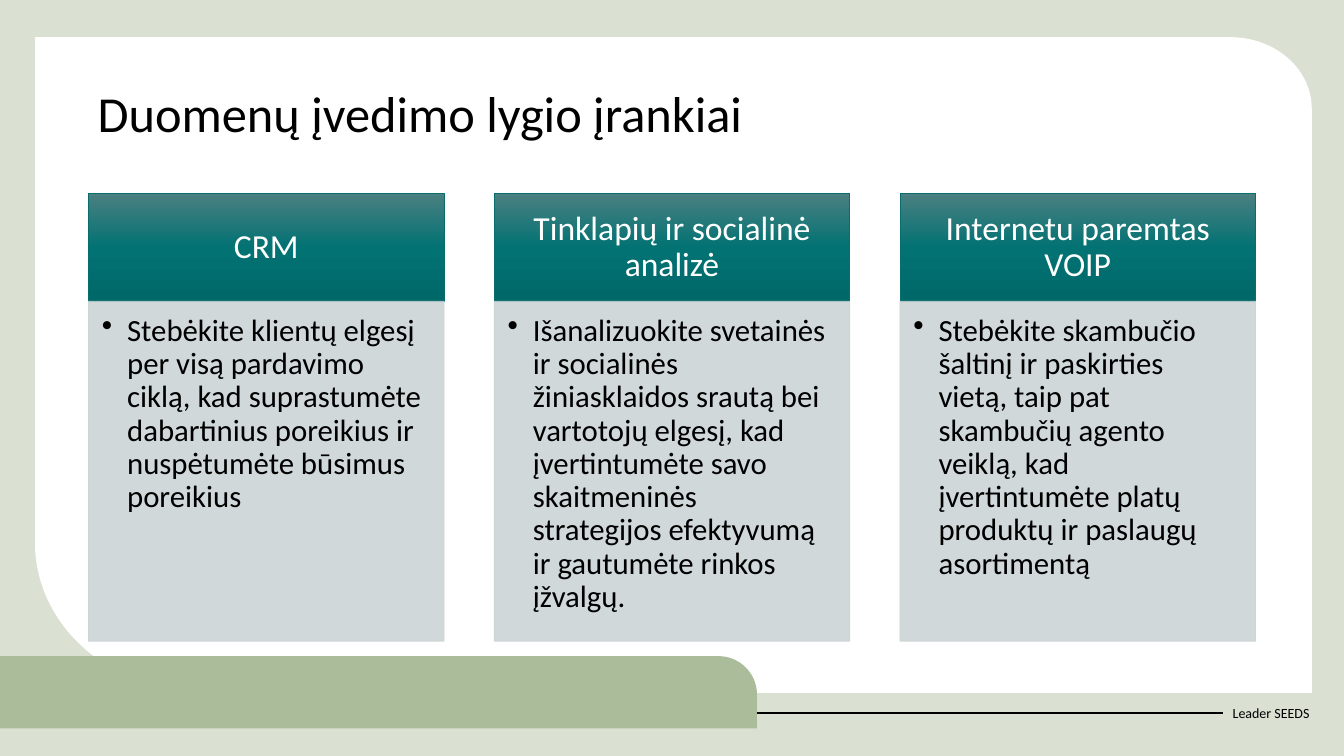
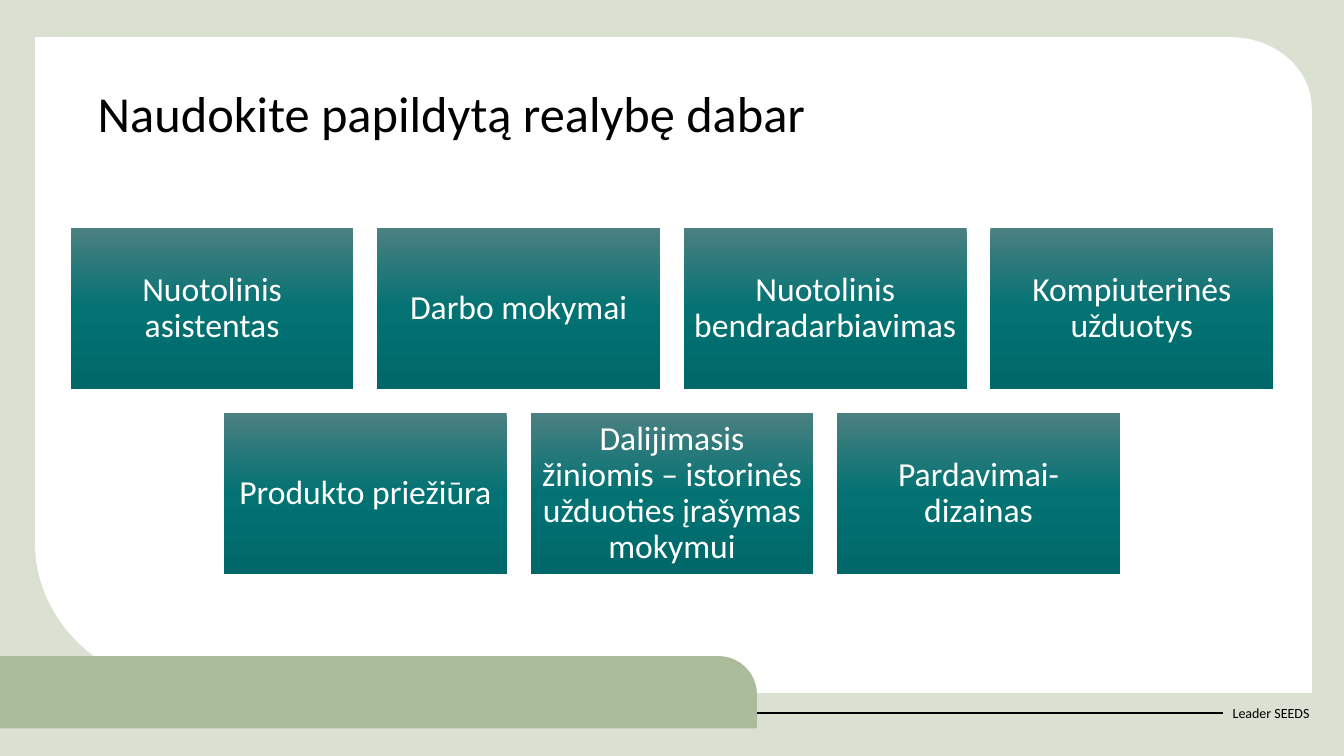
from copy import deepcopy
from math import cos, radians, sin

from lxml import etree
from pptx import Presentation
from pptx.dml.color import RGBColor
from pptx.enum.shapes import MSO_CONNECTOR, MSO_SHAPE
from pptx.enum.text import MSO_ANCHOR, MSO_AUTO_SIZE, PP_ALIGN
from pptx.oxml.ns import qn
from pptx.util import Pt

STRAIGHT = MSO_CONNECTOR.STRAIGHT
RECTANGLE = MSO_SHAPE.RECTANGLE
TOP, MIDDLE = MSO_ANCHOR.TOP, MSO_ANCHOR.MIDDLE
LEFT, CENTER = PP_ALIGN.LEFT, PP_ALIGN.CENTER
NO_AUTOFIT = MSO_AUTO_SIZE.NONE

PAGE_WIDTH, PAGE_HEIGHT = 960, 540
TITLE_ONLY = 5
FONT = "Calibri"
COLORS = {
    "backdrop": "DAE0D2",
    "panel": "FFFFFF",
    "band": "AABC99",
    "text": "000000",
    "light_text": "FFFFFF",
    "heading_line": "086D6E",
    "body": "CCD4D5",
    "teal_top": "4B8081",
    "teal_middle": "037273",
    "teal_bottom": "006869",
}
TEAL_STOPS = ((0, "teal_top"), (0.5, "teal_middle"), (1, "teal_bottom"))

TOOLS = (
    ("CRM",
     "Stebėkite klientų elgesį per visą pardavimo ciklą, kad suprastumėte "
     "dabartinius poreikius ir nuspėtumėte būsimus poreikius"),
    ("Tinklapių ir socialinė analizė",
     "Išanalizuokite svetainės ir socialinės žiniasklaidos srautą bei vartotojų "
     "elgesį, kad įvertintumėte savo skaitmeninės strategijos efektyvumą ir "
     "gautumėte rinkos įžvalgų."),
    ("Internetu paremtas VOIP",
     "Stebėkite skambučio šaltinį ir paskirties vietą, taip pat skambučių agento "
     "veiklą, kad įvertintumėte platų produktų ir paslaugų asortimentą"),
)
USE_ROWS = (
    ("Nuotolinis asistentas", "Darbo mokymai",
     "Nuotolinis bendradarbiavimas", "Kompiuterinės užduotys"),
    ("Produkto priežiūra",
     "Dalijimasis žiniomis – istorinės užduoties įrašymas mokymui",
     "Pardavimai-dizainas"),
)


def color(name):
    return RGBColor.from_string(COLORS[name])


def write(shape, text, size, color_name="text", align=LEFT, anchor=TOP,
          insets=(7.2, 3.6, 7.2, 3.6), spacing=0.9, bullet=False):
    """Fill a shape with one paragraph; insets run left, top, right, bottom."""
    frame = shape.text_frame
    frame.word_wrap = True
    frame.auto_size = NO_AUTOFIT
    frame.vertical_anchor = anchor
    (frame.margin_left, frame.margin_top,
     frame.margin_right, frame.margin_bottom) = map(Pt, insets)
    frame.text = text
    para = frame.paragraphs[0]
    para.alignment = align
    para.line_spacing = spacing
    if bullet:
        properties = para._p.get_or_add_pPr()
        properties.set("marL", str(Pt(18)))
        properties.set("indent", str(-Pt(18)))
        etree.SubElement(properties, qn("a:buChar")).set("char", "•")
    para.font.name = FONT
    para.font.size = Pt(size)
    para.font.color.rgb = color(color_name)


def add_rounded_panel(page, left, top, width, height, color_name,
                      top_right, bottom_left=(0, 0)):
    """Draw a rectangle with two elliptical corners, each given as two radii."""
    right, bottom = left + width, top + height

    def arc(center_x, center_y, radii, start):
        return [(Pt(center_x + radii[0] * cos(radians(angle))),
                 Pt(center_y + radii[1] * sin(radians(angle))))
                for angle in range(start, start + 91, 3)]

    points = arc(right - top_right[0], top + top_right[1], top_right, -90)
    points.append((Pt(right), Pt(bottom)))
    if any(bottom_left):
        points += arc(left + bottom_left[0], bottom - bottom_left[1], bottom_left, 90)
    else:
        points.append((Pt(left), Pt(bottom)))
    builder = page.shapes.build_freeform(Pt(left), Pt(top))
    builder.add_line_segments(points, close=True)
    panel = builder.convert_to_shape()
    panel.shadow.inherit = False
    panel.fill.solid()
    panel.fill.fore_color.rgb = color(color_name)
    panel.line.fill.background()


def add_page(deck, title_text):
    """Add a slide with the shared frame, footer and title."""
    page = deck.slides.add_slide(deck.slide_layouts[TITLE_ONLY])
    add_rounded_panel(page, 25, 26.6, 912, 468.4, "panel", (58, 51), (122, 107))

    footer = page.shapes.add_textbox(Pt(873.4), Pt(494.6), Pt(73), Pt(28.8))
    write(footer, "Leader SEEDS", 10, anchor=MIDDLE, spacing=1)
    rule = page.shapes.add_connector(STRAIGHT, 0, Pt(509), Pt(873.4), Pt(509))
    rule.end_connect(footer, 1)
    rule.line.color.rgb = color("text")
    rule.line.width = Pt(1.5)
    etree.SubElement(rule._element.spPr, qn("a:effectLst"))
    add_rounded_panel(page, 0, 468.7, 540.7, 51.6, "band", (27.5, 27.5))

    title = page.shapes.title
    title._element.getparent().append(title._element)  # in front of the panel
    title.left, title.top, title.width, title.height = map(Pt, (62.6, 59.8, 834.5, 63.4))
    write(title, title_text, 36)
    return page


def add_box(page, left, top, width, height):
    box = page.shapes.add_shape(RECTANGLE, Pt(left), Pt(top), Pt(width), Pt(height))
    box.shadow.inherit = False
    box.line.fill.background()
    return box


def outline(box, color_name):
    box.line.color.rgb = color(color_name)
    box.line.width = Pt(0.5)


def add_teal_box(page, left, top, width, height, text, insets):
    box = add_box(page, left, top, width, height)
    box.fill.gradient()
    box.fill.gradient_angle = 270
    stop_list = box._element.spPr.find(".//" + qn("a:gsLst"))
    stop_list.append(deepcopy(stop_list[-1]))
    for stop, (position, color_name) in zip(box.fill.gradient_stops, TEAL_STOPS):
        stop.position = position
        stop.color.rgb = color(color_name)
    write(box, text, 24, "light_text", CENTER, MIDDLE, insets)
    return box


def add_body_box(page, left, top, width, height, text):
    """Add a slightly transparent box with one bulleted paragraph."""
    box = add_box(page, left, top, width, height)
    box.fill.solid()
    box.fill.fore_color.rgb = color("body")
    outline(box, "body")
    for paint in box._element.spPr.iter(qn("a:srgbClr")):
        etree.SubElement(paint, qn("a:alpha")).set("val", "90000")
    write(box, text, 22, insets=(9.6, 9.6, 12.8, 14.4), bullet=True)


def add_tool_columns(page):
    width, pitch = 254, 289.8
    top, heading_height, body_height = 138.2, 77, 242.8
    for index, (heading, body) in enumerate(TOOLS):
        left = 63.2 + index * pitch
        box = add_teal_box(page, left, top, width, heading_height, heading,
                           (13.4, 7.7, 13.4, 7.7))
        outline(box, "heading_line")
        add_body_box(page, left, top + heading_height, width, body_height, body)


def add_use_cards(page):
    """Lay out the rows of cards, each row centred on the page."""
    width, height, gap, top = 202, 115, 17, 163
    for row, labels in enumerate(USE_ROWS):
        row_width = len(labels) * (width + gap) - gap
        row_left = (PAGE_WIDTH - row_width) / 2
        for column, label in enumerate(labels):
            add_teal_box(page, row_left + column * (width + gap),
                         top + row * (height + gap), width, height, label, (7.2,) * 4)


def main():
    deck = Presentation()
    deck.slide_width, deck.slide_height = Pt(PAGE_WIDTH), Pt(PAGE_HEIGHT)
    backdrop = deck.slide_master.background.fill
    backdrop.solid()
    backdrop.fore_color.rgb = color("backdrop")

    add_tool_columns(add_page(deck, "Duomenų įvedimo lygio įrankiai"))
    add_use_cards(add_page(deck, "Naudokite papildytą realybę dabar"))
    deck.save("out.pptx")


if __name__ == "__main__":
    main()
